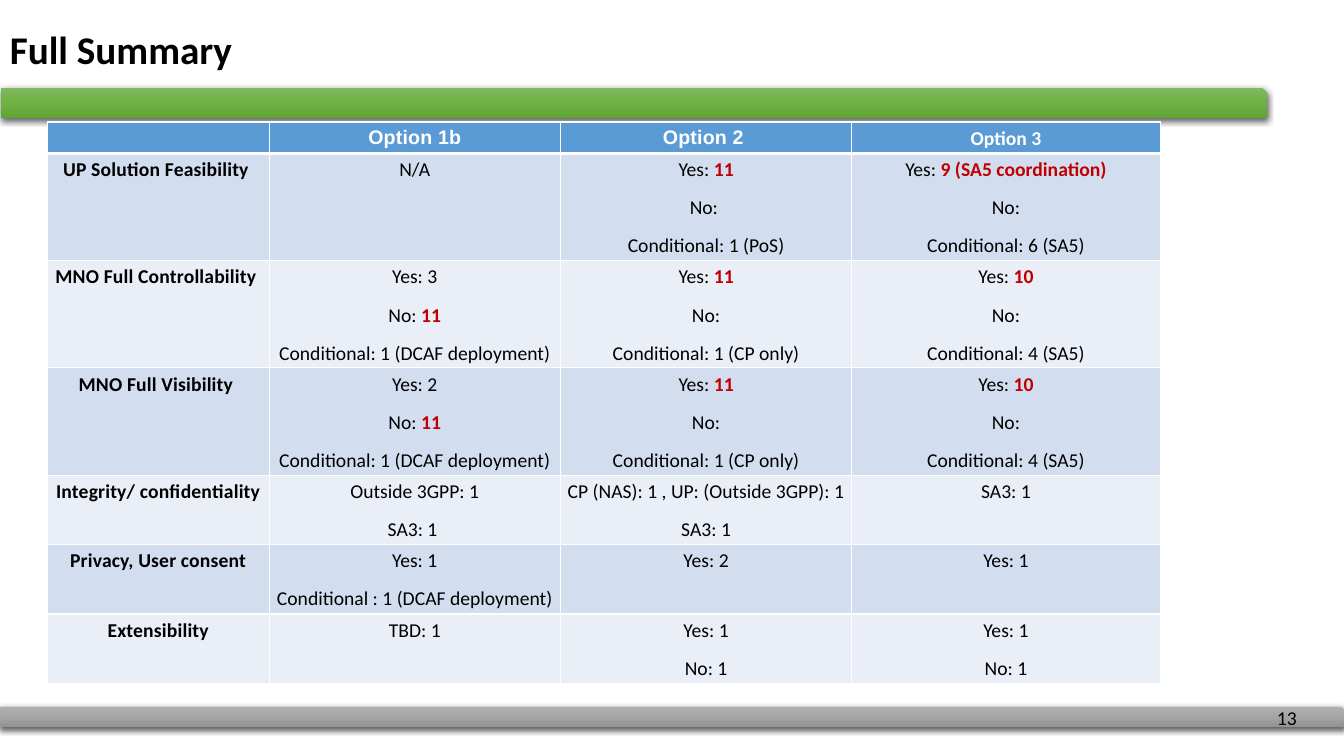
from copy import deepcopy
from dataclasses import dataclass

from lxml import etree
from pptx import Presentation
from pptx.dml.color import RGBColor
from pptx.enum import shapes, text
from pptx.oxml import ns
from pptx.util import Pt


@dataclass(frozen=True)
class Theme:
    black: str = "000000"
    white: str = "FFFFFF"
    accent: str = "C00000"
    header: str = "5B9BD5"
    bands: tuple = ("D2DEEF", "EAEFF7")
    green: tuple = ("81B861", "6FB242", "62A336")
    gray: tuple = ("AFAFAF", "A5A5A5", "939393")
    body_font: str = "Calibri"
    header_font: str = "Arial"
    title_size: float = 28
    body_size: float = 14


THEME = Theme()

COLUMN_WIDTHS = (158.4, 208.1, 208.1, 220.3)
ROW_HEIGHTS = (22.5,) + (76.6,) * 3 + (49.6,) * 3

# A newline starts a paragraph; text between asterisks is highlighted.
HEADERS = ("", "Option 1b", "Option 2 ", "Option 3")
ROWS = (
    ("UP Solution Feasibility ", "N/A",
     "Yes: *11*\nNo: \nConditional: 1 (PoS)",
     "Yes: *9 (SA5 coordination)*\nNo:\nConditional: 6 (SA5)"),
    ("MNO Full Controllability ",
     "Yes: 3\nNo: *11*\nConditional: 1 (DCAF deployment)",
     "Yes: *11*\nNo:\nConditional: 1 (CP only)",
     "Yes: *10*\nNo:\nConditional: 4 (SA5)"),
    ("MNO Full Visibility ",
     "Yes: 2\nNo: *11*\nConditional: 1 (DCAF deployment)",
     "Yes: *11*\nNo:\nConditional: 1 (CP only)",
     "Yes: *10*\nNo:\nConditional: 4 (SA5)"),
    ("Integrity/ confidentiality", "Outside 3GPP: 1\nSA3: 1 ",
     "CP (NAS): 1 , UP: (Outside 3GPP): 1\nSA3: 1", "SA3: 1"),
    ("Privacy, User consent", "Yes: 1\nConditional : 1 (DCAF deployment) ",
     "Yes: 2", "Yes: 1"),
    ("Extensibility", "TBD: 1", "Yes: 1\nNo: 1", "Yes: 1\nNo: 1"),
)


def set_attributes(target, values):
    for name, value in values.items():
        setattr(target, name, value)


def add_element(parent, tag, **attributes):
    return etree.SubElement(parent, ns.qn(tag), attributes)


def add_run(paragraph, content, color=THEME.black, **font_values):
    run = paragraph.add_run()
    run.text = content
    values = {"name": THEME.body_font, "size": Pt(THEME.body_size), "bold": False}
    set_attributes(run.font, values | font_values)
    run.font.color.rgb = RGBColor.from_string(color)
    return run


def add_label(slide, box, content, wrap, anchor, line_spacing=1.0, **font_values):
    frame = slide.shapes.add_textbox(*map(Pt, box)).text_frame
    set_attributes(frame, {"word_wrap": wrap, "vertical_anchor": anchor})
    frame.paragraphs[0].line_spacing = line_spacing
    add_run(frame.paragraphs[0], content, **font_values)


def add_bar(slide, box, colors):
    """Draw a snipped bar with a vertical gradient and a soft shadow below."""
    bar = slide.shapes.add_shape(
        shapes.MSO_SHAPE.SNIP_1_RECTANGLE, *map(Pt, box))
    bar.line.fill.background()
    bar.fill.gradient()
    bar.fill.gradient_angle = 270
    properties = bar._element.spPr
    stops = properties.find(".//" + ns.qn("a:gsLst"))
    stops.append(deepcopy(stops[-1]))
    for index, (stop, color) in enumerate(zip(bar.fill.gradient_stops, colors)):
        stop.position = index / (len(colors) - 1)
        stop.color.rgb = RGBColor.from_string(color)
    bar.shadow.inherit = False
    shadow = add_element(
        properties.find(ns.qn("a:effectLst")), "a:outerShdw",
        blurRad=str(Pt(4.5)), dist=str(Pt(1.5)), dir="5400000",
        algn="ctr", rotWithShape="0")
    shadow_color = add_element(shadow, "a:srgbClr", val=THEME.black)
    add_element(shadow_color, "a:alpha", val="63000")


def set_borders(cell, top, bottom):
    """Draw white cell borders; the side borders are one point wide."""
    properties = cell._tc.get_or_add_tcPr()
    widths = {"a:lnL": 1, "a:lnR": 1, "a:lnT": top, "a:lnB": bottom}
    for index, (tag, width) in enumerate(widths.items()):
        line = etree.Element(ns.qn(tag), w=str(Pt(width)))
        fill = add_element(line, "a:solidFill")
        add_element(fill, "a:srgbClr", val=THEME.white)
        properties.insert(index, line)


def fill_cell(cell, content, fill_color, spaced, **font_values):
    set_attributes(cell, {"margin_left": Pt(4.3), "margin_right": Pt(4.3),
                          "margin_top": Pt(2.1), "margin_bottom": Pt(2.1)})
    cell.fill.solid()
    cell.fill.fore_color.rgb = RGBColor.from_string(fill_color)
    for index, line in enumerate(content.split("\n")):
        frame = cell.text_frame
        paragraph = frame.add_paragraph() if index else frame.paragraphs[0]
        set_attributes(paragraph, {"alignment": text.PP_ALIGN.CENTER,
                                   "line_spacing": 1.07, "space_after": Pt(9)})
        for part, words in enumerate(line.split("*")):
            if not words:
                continue
            highlight = {"color": THEME.accent, "bold": True} if part % 2 else {}
            run = add_run(paragraph, words, **(font_values | highlight))
            if spaced:
                run.font._element.set("spc", "10")
        if not line:
            add_element(paragraph._p, "a:endParaRPr",
                        sz=str(int(THEME.body_size * 100)))


def add_summary_table(slide):
    table = slide.shapes.add_table(
        len(ROW_HEIGHTS), len(COLUMN_WIDTHS), Pt(33.84), Pt(87.1),
        Pt(sum(COLUMN_WIDTHS)), Pt(sum(ROW_HEIGHTS))).table
    for column, width in zip(table.columns, COLUMN_WIDTHS):
        column.width = Pt(width)
    for row, height in zip(table.rows, ROW_HEIGHTS):
        row.height = Pt(height)
    last_column = len(HEADERS) - 1
    for row_index, contents in enumerate((HEADERS,) + ROWS):
        is_header = row_index == 0
        band = THEME.header if is_header else THEME.bands[(row_index - 1) % 2]
        for column_index, content in enumerate(contents):
            cell = table.cell(row_index, column_index)
            arial = is_header and column_index < last_column
            fill_cell(cell, content, band,
                      spaced=arial or column_index == 0,
                      color=THEME.white if is_header else THEME.black,
                      bold=is_header or column_index == 0,
                      name=THEME.header_font if arial else THEME.body_font)
            set_borders(cell, top=3 if row_index == 1 else 1,
                        bottom=3 if is_header else 1)


def main():
    presentation = Presentation()
    set_attributes(presentation, {"slide_width": Pt(960), "slide_height": Pt(540)})
    slide = presentation.slides.add_slide(presentation.slide_layouts[6])
    add_bar(slide, (0, 504.7, 960, 14.4), THEME.gray)
    add_bar(slide, (0.7, 62.6, 904.3, 21.6), THEME.green)
    add_label(slide, (905, 500.4, 31, 24.5), "13", False, text.MSO_ANCHOR.TOP)
    add_label(slide, (0, -15.1, 828, 104.4), "Full Summary", True,
              text.MSO_ANCHOR.MIDDLE, line_spacing=0.9,
              size=Pt(THEME.title_size), bold=True)
    add_summary_table(slide)
    presentation.save("out.pptx")


if __name__ == "__main__":
    main()
